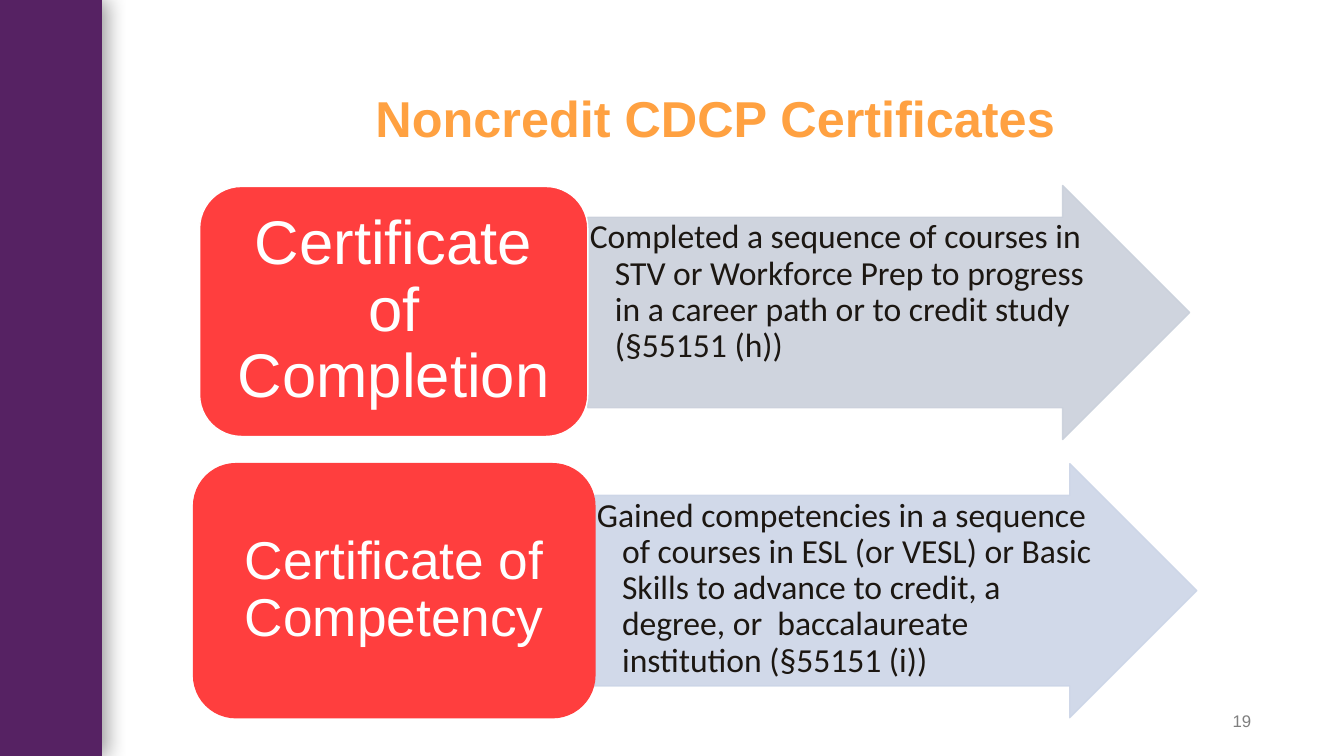
from lxml import etree
from pptx import Presentation
from pptx.dml.color import RGBColor
from pptx.enum.shapes import MSO_SHAPE as Shape
from pptx.enum.text import MSO_ANCHOR as Anchor, PP_ALIGN as Align
from pptx.oxml import parse_xml
from pptx.oxml.ns import nsdecls, qn
from pptx.util import Pt

PX = 9144  # 100 px to the inch


def add_panel(kind, area, fill, line=None, alpha=None, adjustments=()):
    """Draw a filled preset shape; alpha is a percentage for fill and line."""
    panel = page.shapes.add_shape(kind, *[n * PX for n in area])
    panel.shadow.inherit = False
    for index, value in enumerate(adjustments):
        panel.adjustments[index] = value
    panel.fill.solid()
    panel.fill.fore_color.rgb = RGBColor.from_string(fill)
    if line:
        panel.line.color.rgb = RGBColor.from_string(line)
        panel.line.width = Pt(1)
    else:
        panel.line.fill.background()
    if alpha:
        for color in panel._element.spPr.iter(qn("a:srgbClr")):
            etree.SubElement(color, qn("a:alpha")).set("val", str(alpha * 1000))
    return panel


def add_text(text, area, size, color, font="Arial", bold=False, align=Align.CENTER,
             anchor=Anchor.MIDDLE, insets=(10, 5, 10, 5), spacing=0.9, hanging=0):
    """Place one paragraph in a text box; hanging is its hanging indent in px."""
    box = page.shapes.add_textbox(*[n * PX for n in area])
    frame = box.text_frame
    frame.word_wrap = True
    frame.vertical_anchor = anchor
    (frame.margin_left, frame.margin_top,
     frame.margin_right, frame.margin_bottom) = [n * PX for n in insets]
    para = frame.paragraphs[0]
    para.alignment = align
    para.line_spacing = spacing
    if hanging:
        properties = para._p.get_or_add_pPr()
        properties.set("marL", str(hanging * PX))
        properties.set("indent", str(-hanging * PX))
    span = para.add_run()
    span.text = text
    span.font.name = font
    span.font.size = Pt(size)
    span.font.bold = bold
    span.font.color.rgb = RGBColor.from_string(color)


deck = Presentation()
deck.slide_width, deck.slide_height = 1333 * PX, 750 * PX
page = deck.slides.add_slide(deck.slide_layouts[6])

# Purple side band with a soft shadow to the right
band = add_panel(Shape.RECTANGLE, (0, 0, 101, 750), "562263")
band._element.spPr.find(qn("a:effectLst")).append(parse_xml(
    f'<a:outerShdw {nsdecls("a")} blurRad="{Pt(15)}" dist="{Pt(3)}" dir="0" '
    'algn="l" rotWithShape="0"><a:srgbClr val="000000"><a:alpha val="40000"/>'
    '</a:srgbClr></a:outerShdw>'))

# Title and page number
add_text("Noncredit CDCP Certificates", (160, 40, 1099, 112), 36, "FFA141",
         bold=True, anchor=Anchor.BOTTOM)
add_text("19", (1141, 695, 100, 40), 12, "7F7F7F", align=Align.RIGHT,
         insets=(10, 5, 0, 5), spacing=1.0)

# Certificates: label, size, padding, label area, label line, arrow place, arrow colour, detail
certificates = [
    ("Certificate of Completion", 44, 18, (198, 185, 385, 248), "FFFFFF",
     (583, 184), "CAD0DB",
     "Completed a sequence of courses in STV or Workforce Prep to progress "
     "in a career path or to credit study (§55151 (h))"),
    ("Certificate of Competency", 38, 16, (192, 460, 398, 252), "FF3E3E",
     (590, 460), "CCD5E7",
     "Gained competencies in a sequence of courses in ESL (or VESL) or Basic "
     "Skills to advance to credit, a degree, or  baccalaureate institution "
     "(§55151 (i))"),
]
for label, size, padding, area, line, (left, top), tint, detail in certificates:
    # Arrow with its description
    add_panel(Shape.RIGHT_ARROW, (left, top, 597, 252), tint, line=tint, alpha=90,
              adjustments=(0.75, 0.5))
    add_text(detail, (left, top + 32, 503, 189), 24, "1C1712", font="Calibri",
             align=Align.LEFT, anchor=Anchor.TOP, insets=(2, 2, 2, 2), hanging=25)

    # Rounded label
    add_panel(Shape.ROUNDED_RECTANGLE, area, "FF3E3E", line=line, adjustments=(0.167,))
    x, y, width, height = area
    add_text(label, (x + 12, y + 12, width - 24, height - 24), size, "FFFFFF",
             insets=(padding, padding // 2, padding, padding // 2))

deck.save("out.pptx")
